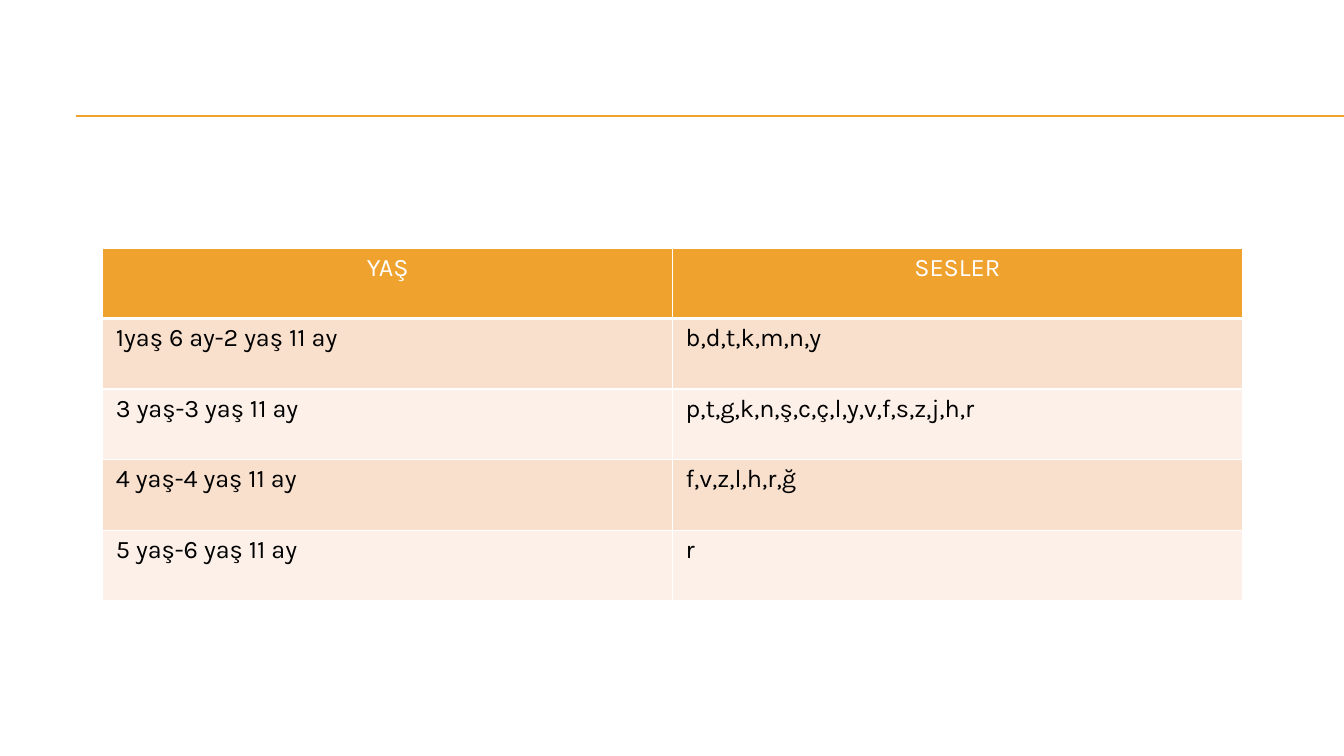
from lxml import etree
from pptx import Presentation
from pptx.dml.color import RGBColor
from pptx.enum import shapes, text
from pptx.oxml import ns
from pptx.util import Inches, Pt

ORANGE = RGBColor(0xF0, 0xA2, 0x2E)
PEACH = RGBColor(0xF9, 0xE0, 0xCD)
CREAM = RGBColor(0xFC, 0xF0, 0xE8)
WHITE = RGBColor(0xFF, 0xFF, 0xFF)
BLACK = RGBColor(0x00, 0x00, 0x00)

ROWS = [
    ("YAŞ", "SESLER"),
    ("1yaş 6 ay-2 yaş 11 ay", "b,d,t,k,m,n,y"),
    ("3 yaş-3 yaş 11 ay", "p,t,g,k,n,ş,c,ç,l,y,v,f,s,z,j,h,r"),
    ("4 yaş-4 yaş 11 ay", "f,v,z,l,h,r,ğ"),
    ("5 yaş-6 yaş 11 ay", "r"),
]


def write_cell(cell, wording, fill, color, align):
    cell.fill.solid()
    cell.fill.fore_color.rgb = fill
    cell.margin_left = cell.margin_right = Inches(0.13)
    cell.margin_top = cell.margin_bottom = Inches(0.05)
    para = cell.text_frame.paragraphs[0]
    para.alignment = align
    span = para.add_run()
    span.text = wording
    span.font.name = "Karla"
    span.font.size = Pt(18)
    span.font.bold = False
    span.font.color.rgb = color


def add_borders(cell, bottom):
    """Draw white cell borders, 1 pt except for the given bottom width."""
    properties = cell._tc.get_or_add_tcPr()
    widths = {"a:lnL": 1, "a:lnR": 1, "a:lnT": 1, "a:lnB": bottom}
    for place, (tag, width) in enumerate(widths.items()):
        border = etree.Element(ns.qn(tag), w=str(Pt(width)))
        solid = etree.SubElement(border, ns.qn("a:solidFill"))
        etree.SubElement(solid, ns.qn("a:srgbClr"), val=str(WHITE))
        properties.insert(place, border)


deck = Presentation()
deck.slide_width = Inches(13.33)
deck.slide_height = Inches(7.5)
page = deck.slides.add_slide(deck.slide_layouts[6])

for y in (1.15, 1.16):
    rule = page.shapes.add_connector(
        shapes.MSO_CONNECTOR.STRAIGHT, Inches(0.75), Inches(y), Inches(13.33), Inches(y))
    rule.line.color.rgb = ORANGE
    rule.line.width = Pt(0.75)
    etree.SubElement(rule._element.spPr, ns.qn("a:effectLst"))

sounds = page.shapes.add_table(
    len(ROWS), 2, Inches(1.02), Inches(2.46), Inches(11.3), Inches(3.5)).table

for row, wordings in enumerate(ROWS):
    for column, wording in enumerate(wordings):
        cell = sounds.cell(row, column)
        if row == 0:
            write_cell(cell, wording, fill=ORANGE, color=WHITE, align=text.PP_ALIGN.CENTER)
        else:
            write_cell(cell, wording, fill=PEACH if row % 2 else CREAM,
                       color=BLACK, align=text.PP_ALIGN.LEFT)
        add_borders(cell, bottom=3 if row == 0 else 1)

deck.save("out.pptx")
